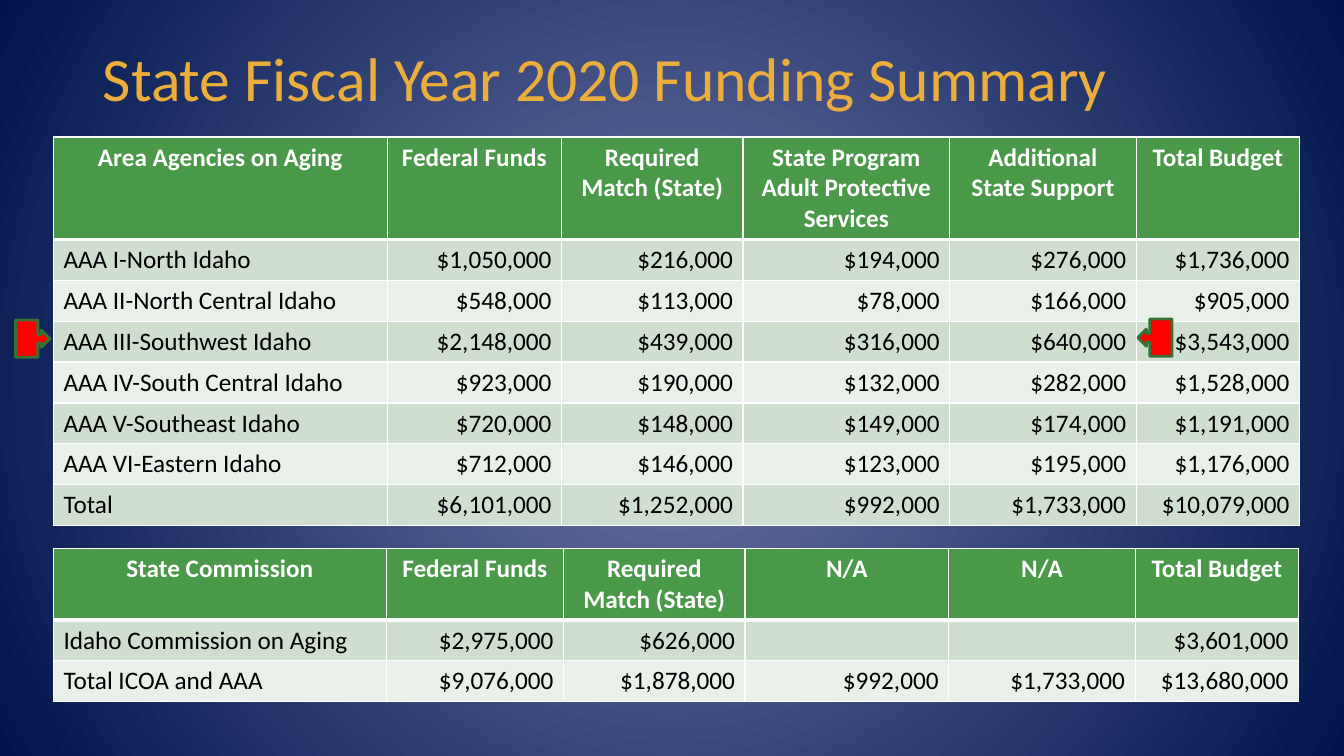
from lxml import etree
from pptx import Presentation
from pptx.dml.color import RGBColor
from pptx.enum.shapes import MSO_SHAPE
from pptx.enum.text import MSO_ANCHOR, PP_ALIGN
from pptx.oxml.ns import qn
from pptx.util import Inches, Pt

LEFT, CENTER, RIGHT = PP_ALIGN.LEFT, PP_ALIGN.CENTER, PP_ALIGN.RIGHT
MIDDLE = MSO_ANCHOR.MIDDLE
CALLOUT = MSO_SHAPE.UP_ARROW_CALLOUT

GLOW = RGBColor(0x6D, 0x77, 0xA7)
NAVY = RGBColor(0x00, 0x15, 0x4C)
GOLD = RGBColor(0xEB, 0xAD, 0x3B)
GREEN = RGBColor(0x49, 0x99, 0x49)
DARK_GREEN = RGBColor(0x36, 0x71, 0x36)
BANDS = (RGBColor(0xE9, 0xEF, 0xE9), RGBColor(0xD0, 0xDE, 0xD0))
WHITE = RGBColor(0xFF, 0xFF, 0xFF)
BLACK = RGBColor(0x00, 0x00, 0x00)
RED = RGBColor(0xFF, 0x00, 0x00)

FONT = "Calibri"
TABLE_LEFT = 0.53
ROW_HEIGHT = 0.4

AGENCIES = [
    ("Area Agencies on Aging", "Federal Funds", "Required Match (State)",
     "State Program Adult Protective Services", "Additional State Support", "Total Budget"),
    ("AAA I-North Idaho", "$1,050,000", "$216,000", "$194,000", "$276,000", "$1,736,000"),
    ("AAA II-North Central Idaho", "$548,000", "$113,000", "$78,000", "$166,000", "$905,000"),
    ("AAA III-Southwest Idaho", "$2,148,000", "$439,000", "$316,000", "$640,000", "$3,543,000"),
    ("AAA IV-South Central Idaho", "$923,000", "$190,000", "$132,000", "$282,000", "$1,528,000"),
    ("AAA V-Southeast Idaho", "$720,000", "$148,000", "$149,000", "$174,000", "$1,191,000"),
    ("AAA VI-Eastern Idaho", "$712,000", "$146,000", "$123,000", "$195,000", "$1,176,000"),
    ("Total", "$6,101,000", "$1,252,000", "$992,000", "$1,733,000", "$10,079,000"),
]
COMMISSION = [
    ("State Commission", "Federal Funds", "Required Match (State)", "N/A", "N/A", "Total Budget"),
    ("Idaho Commission on Aging", "$2,975,000", "$626,000", "", "", "$3,601,000"),
    ("Total ICOA and AAA", "$9,076,000", "$1,878,000", "$992,000", "$1,733,000", "$13,680,000"),
]
# Top, header height, column widths, rows of text
TABLES = [
    (1.36, 1.01, (3.31, 1.73, 1.8, 2.05, 1.85, 1.62), AGENCIES),
    (5.44, 0.7, (3.3, 1.76, 1.8, 2.02, 1.85, 1.62), COMMISSION),
]


def add_run(paragraph, text, size, color, bold=False):
    run = paragraph.add_run()
    run.text = text
    run.font.name = FONT
    run.font.size = Pt(size)
    run.font.bold = bold
    run.font.color.rgb = color


def set_borders(cell, row):
    """Give a cell white edges, with a heavy rule under the header row."""
    weights = {"L": 1, "R": 1, "T": 3 if row == 1 else 1, "B": 3 if row == 0 else 1}
    properties = cell._tc.get_or_add_tcPr()
    for side, weight in weights.items():
        line = etree.SubElement(properties, qn(f"a:ln{side}"), w=str(Pt(weight)))
        fill = etree.SubElement(line, qn("a:solidFill"))
        etree.SubElement(fill, qn("a:srgbClr"), val=str(WHITE))


prs = Presentation()
prs.slide_width, prs.slide_height = Inches(13.33), Inches(7.5)
slide = prs.slides.add_slide(prs.slide_layouts[5])

# Radial background
backdrop = slide.background.fill
backdrop.gradient()
for stop, position, color in zip(backdrop.gradient_stops, (0, 1), (GLOW, NAVY)):
    stop.position = position
    stop.color.rgb = color
gradient = slide.element.find(".//" + qn("a:gradFill"))
gradient.remove(gradient.find(qn("a:lin")))
radial = etree.Element(qn("a:path"), path="circle")
etree.SubElement(radial, qn("a:fillToRect"), l="50000", t="50000", r="50000", b="50000")
gradient.find(qn("a:gsLst")).addnext(radial)

# Title
title = slide.shapes.title
title.left, title.top, title.width, title.height = map(Inches, (0.92, 0.4, 11.5, 0.82))
title.text_frame.vertical_anchor = MIDDLE
heading = title.text_frame.paragraphs[0]
heading.alignment = LEFT
heading.line_spacing = 0.9
add_run(heading, "State Fiscal Year 2020 Funding Summary", 44, GOLD)

# Funding tables
for top, header_height, widths, rows in TABLES:
    heights = [header_height] + [ROW_HEIGHT] * (len(rows) - 1)
    table = slide.shapes.add_table(
        len(rows), len(widths), Inches(TABLE_LEFT), Inches(top),
        Inches(sum(widths)), Inches(sum(heights))).table
    for column, width in zip(table.columns, widths):
        column.width = Inches(width)
    for r, (texts, height) in enumerate(zip(rows, heights)):
        table.rows[r].height = Inches(height)
        header = r == 0
        for c, text in enumerate(texts):
            cell = table.cell(r, c)
            set_borders(cell, r)
            cell.fill.solid()
            cell.fill.fore_color.rgb = GREEN if header else BANDS[r % 2]
            paragraph = cell.text_frame.paragraphs[0]
            paragraph.alignment = CENTER if header else RIGHT if c else LEFT
            if text:
                add_run(paragraph, text, 18, WHITE if header else BLACK, header)

# Markers pointing at the Southwest Idaho row
for left, top, rotation in ((11.27, 3.18, 270), (0.14, 3.19, 90)):
    marker = slide.shapes.add_shape(
        CALLOUT, Inches(left), Inches(top), Inches(0.37), Inches(0.34))
    marker.rotation = rotation
    marker.shadow.inherit = False
    marker.fill.solid()
    marker.fill.fore_color.rgb = RED
    marker.line.color.rgb = DARK_GREEN
    marker.line.width = Pt(2)

prs.save("out.pptx")
